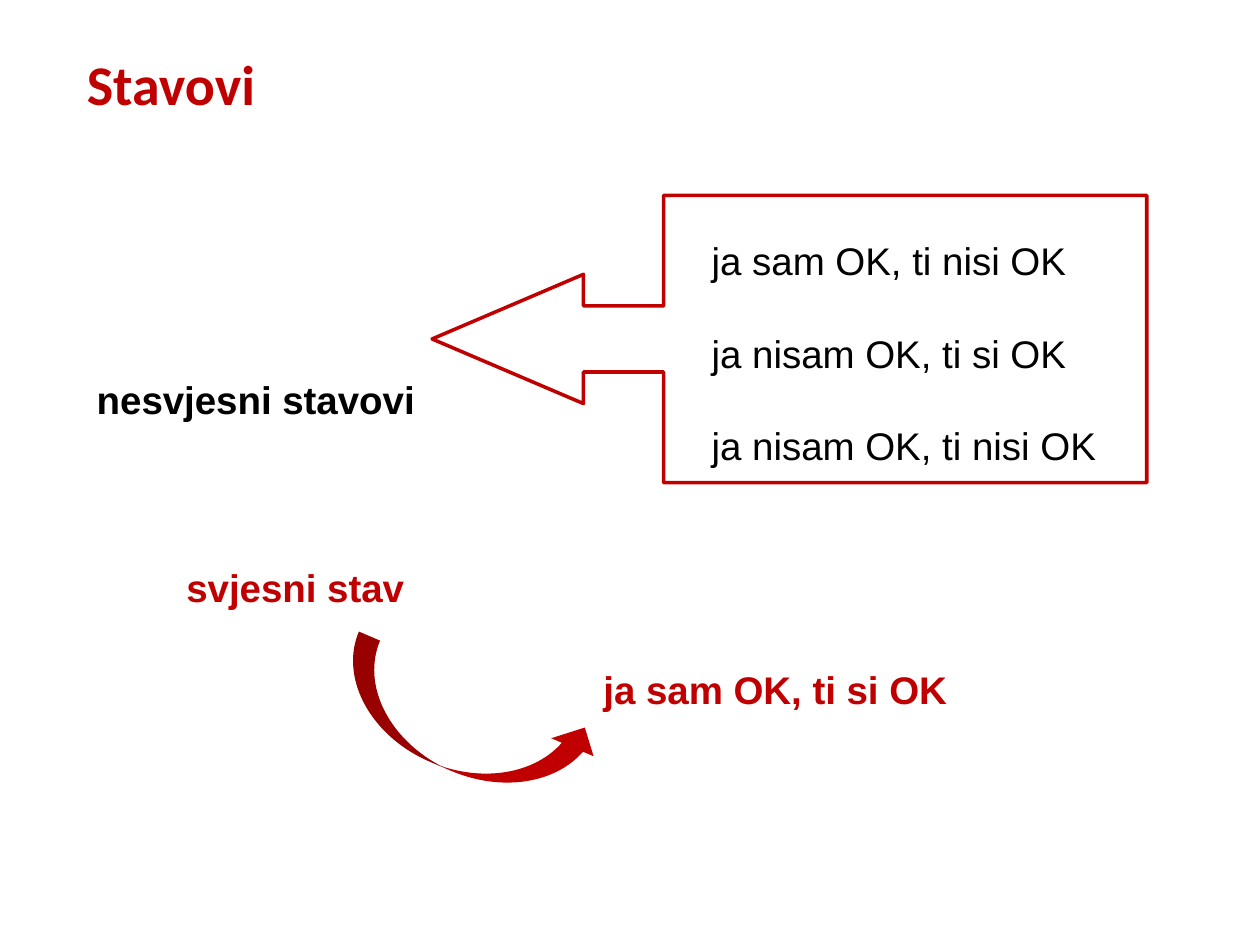
from pptx import Presentation
from pptx.dml.color import RGBColor
from pptx.enum.shapes import MSO_SHAPE
from pptx.enum.text import MSO_ANCHOR
from pptx.util import Pt

RED = RGBColor(0xC0, 0x00, 0x00)
BLACK = RGBColor(0x00, 0x00, 0x00)
CALLOUT = MSO_SHAPE.LEFT_ARROW_CALLOUT
CURVED_ARROW = MSO_SHAPE.CURVED_UP_ARROW
TOP, MIDDLE = MSO_ANCHOR.TOP, MSO_ANCHOR.MIDDLE


def add_text(slide, box, lines, color, bold=True, font="Arial", size=22, spacing=2.0, anchor=TOP):
    """Write one paragraph per line in the given box."""
    tf = slide.shapes.add_textbox(*map(Pt, box)).text_frame
    tf.word_wrap = True
    tf.vertical_anchor = anchor
    for i, line in enumerate(lines):
        p = tf.paragraphs[0] if i == 0 else tf.add_paragraph()
        p.line_spacing = spacing
        r = p.add_run()
        r.text = line
        r.font.name = font
        r.font.size = Pt(size)
        r.font.bold = bold
        r.font.color.rgb = color


def add_callout(slide, box):
    """Draw the outlined callout pointing left."""
    sp = slide.shapes.add_shape(CALLOUT, *map(Pt, box))
    sp.shadow.inherit = False
    sp.fill.background()
    sp.line.color.rgb = RED
    sp.line.width = Pt(2)
    for i, value in enumerate((0.23, 0.225, 0.527, 0.676)):
        sp.adjustments[i] = value


def add_curved_arrow(slide, box):
    """Draw the tilted curved arrow."""
    sp = slide.shapes.add_shape(CURVED_ARROW, *map(Pt, box))
    sp.shadow.inherit = False
    sp.fill.solid()
    sp.fill.fore_color.rgb = RED
    sp.line.fill.background()
    sp.rotation = 23


def add_unconscious(slide, left, top):
    """Place the unconscious attitudes and their callout."""
    statements = ["ja sam OK, ti nisi OK", "ja nisam OK, ti si OK", "ja nisam OK, ti nisi OK"]
    add_text(slide, (left + 351.4, top, 255, 164), statements, BLACK, bold=False)
    add_callout(slide, (left + 198.7, top + 5.8, 408.4, 164.2))
    add_text(slide, (left, top + 79.2, 215, 57), ["nesvjesni stavovi"], BLACK)


def add_conscious(slide, left, top):
    """Place the conscious attitude, its statement and the arrow."""
    add_text(slide, (left, top, 215, 57), ["svjesni stav"], RED)
    add_text(slide, (left + 238.3, top + 58.3, 300, 57), ["ja sam OK, ti si OK"], RED)
    add_curved_arrow(slide, (left + 89.3, top + 96.5, 153.4, 52.6))


def main():
    """Build and save the slide."""
    prs = Presentation()
    prs.slide_width, prs.slide_height = Pt(720), Pt(540)
    slide = prs.slides.add_slide(prs.slide_layouts[6])
    add_text(slide, (42.5, 21.6, 250.5, 52), ["Stavovi"], RED,
             font="Calibri", size=32, spacing=1.0, anchor=MIDDLE)
    add_unconscious(slide, 48.2, 105.8)
    add_conscious(slide, 99.4, 292.3)
    prs.save("out.pptx")


if __name__ == "__main__":
    main()
